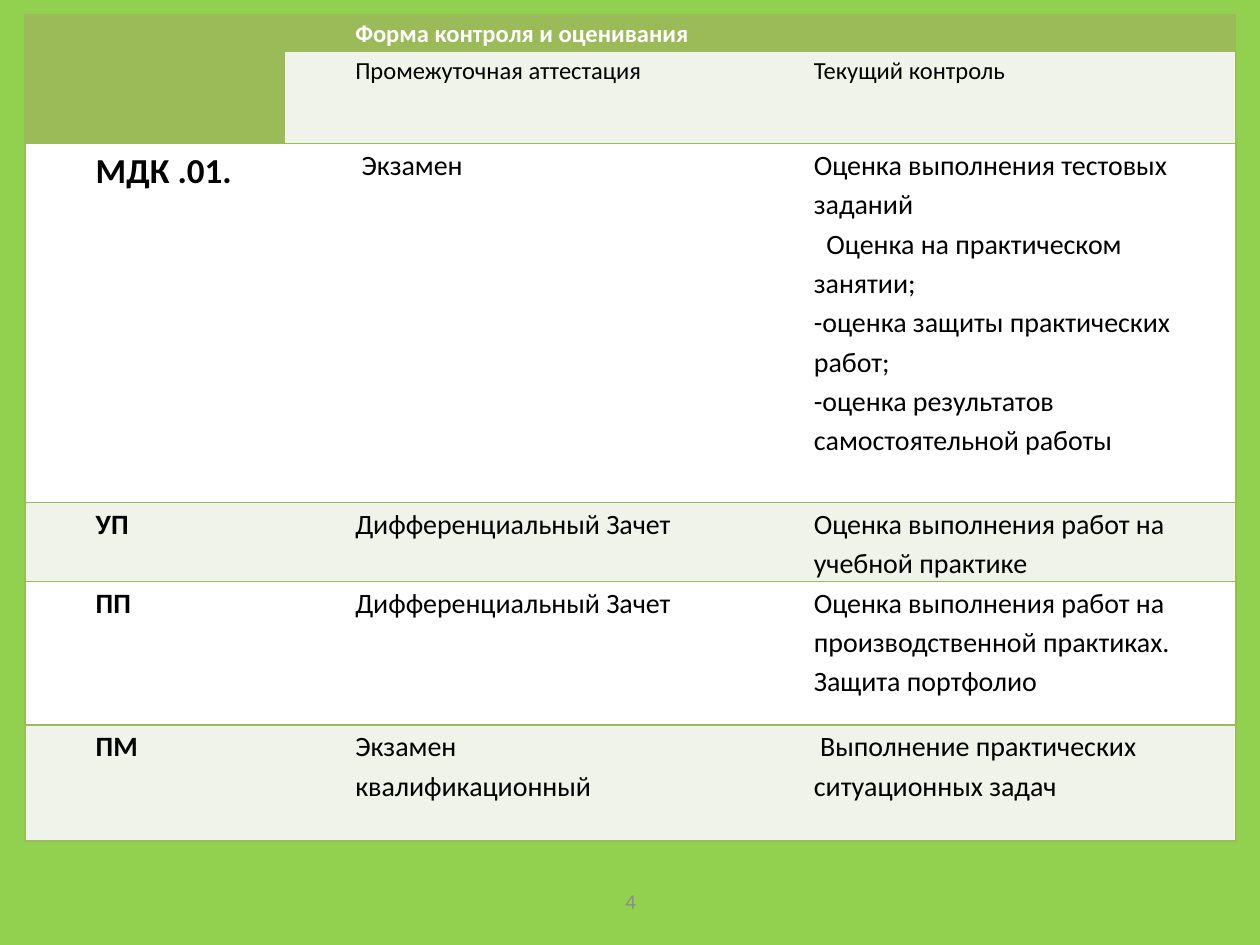
"""Build a slide with a table of assessment forms for each course part."""
from lxml import etree
from pptx import Presentation
from pptx.dml.color import RGBColor
from pptx.enum.text import MSO_ANCHOR, PP_ALIGN
from pptx.oxml.ns import qn
from pptx.util import Inches, Pt

MIDDLE, CENTER = MSO_ANCHOR.MIDDLE, PP_ALIGN.CENTER
LIME = RGBColor(0x92, 0xD0, 0x50)
OLIVE = RGBColor(0x9B, 0xBB, 0x59)
PALE = RGBColor(0xEF, 0xF3, 0xEA)
WHITE = RGBColor(0xFF, 0xFF, 0xFF)
BLACK = RGBColor(0, 0, 0)
GRAY = RGBColor(0x8C, 0x8C, 0x8C)
FONT = "Calibri"

ROWS = [
    ("", "Форма контроля и оценивания", ""),
    ("", "Промежуточная аттестация", "Текущий контроль"),
    ("МДК .01.", "Экзамен",
     "Оценка выполнения тестовых заданий\n"
     "Оценка на практическом занятии;\n"
     "-оценка защиты практических работ;\n"
     "-оценка результатов самостоятельной работы"),
    ("УП", "Дифференциальный Зачет",
     "Оценка выполнения работ на учебной практике"),
    ("ПП", "Дифференциальный Зачет",
     "Оценка выполнения работ на производственной практиках.\n"
     "Защита портфолио"),
    ("ПМ", "Экзамен\nквалификационный",
     "Выполнение практических ситуационных задач"),
]
WIDTHS = [2.06, 3.64, 3.91]
HEIGHTS = [0.29, 0.73, 2.85, 0.61, 1.14, 0.92]
INDENTS = {(2, 1, 0): 0.05, (2, 2, 1): 0.1, (5, 2, 0): 0.05}


def set_font(para, size, color, bold=False):
    for run in para.runs:
        font = run.font
        font.name, font.size, font.bold = FONT, Pt(size), bold
        font.color.rgb = color


def set_edges(cell, sides):
    props = cell._tc.get_or_add_tcPr()
    for side in "LRTB":
        line = etree.SubElement(props, qn(f"a:ln{side}"), w=str(Pt(1)))
        if side in sides:
            fill = etree.SubElement(line, qn("a:solidFill"))
            etree.SubElement(fill, qn("a:srgbClr"), val=str(OLIVE))
        else:
            etree.SubElement(line, qn("a:noFill"))


def fill_cell(cell, row, col):
    head = row == 0 or (row == 1 and col == 0)
    set_edges(cell, "TB" + {0: "L", 2: "R"}.get(col, ""))
    cell.fill.solid()
    cell.fill.fore_color.rgb = OLIVE if head else PALE if row % 2 or row == 5 else WHITE
    if row == 4:
        cell.fill.fore_color.rgb = WHITE
    cell.margin_left = cell.margin_right = Inches(0.06)
    cell.margin_top = cell.margin_bottom = 0
    cell.text_frame.text = ROWS[row][col]
    size = 14 if row < 2 else 20 if (row, col) == (2, 0) else 16
    for i, para in enumerate(cell.text_frame.paragraphs):
        para.line_spacing = 1.15
        props = para._p.get_or_add_pPr()
        props.set("marL", str(Inches(0.5)))
        props.set("indent", str(Inches(INDENTS.get((row, col, i), 0))))
        set_font(para, size, WHITE if head else BLACK, row == 0 or col == 0)


def add_table(slide):
    frame = slide.shapes.add_table(
        len(ROWS), len(WIDTHS), Inches(0.2), Inches(0.12),
        Inches(sum(WIDTHS)), Inches(sum(HEIGHTS)))
    table = frame.table
    for col, width in zip(table.columns, WIDTHS):
        col.width = Inches(width)
    for row, height in zip(table.rows, HEIGHTS):
        row.height = Inches(height)
    for row in range(len(ROWS)):
        for col in range(len(WIDTHS)):
            fill_cell(table.cell(row, col), row, col)
    table.cell(0, 0).merge(table.cell(1, 0))
    table.cell(0, 1).merge(table.cell(0, 2))


def add_number(slide):
    box = slide.shapes.add_textbox(
        Inches(3.42), Inches(6.95), Inches(3.17), Inches(0.4))
    frame = box.text_frame
    frame.word_wrap = True
    frame.vertical_anchor = MIDDLE
    frame.text = "4"
    para = frame.paragraphs[0]
    para.alignment = CENTER
    set_font(para, 12, GRAY)


def main():
    deck = Presentation()
    deck.slide_width, deck.slide_height = Inches(10), Inches(7.5)
    slide = deck.slides.add_slide(deck.slide_layouts[6])
    slide.background.fill.solid()
    slide.background.fill.fore_color.rgb = LIME
    add_table(slide)
    add_number(slide)
    deck.save("out.pptx")


if __name__ == "__main__":
    main()
